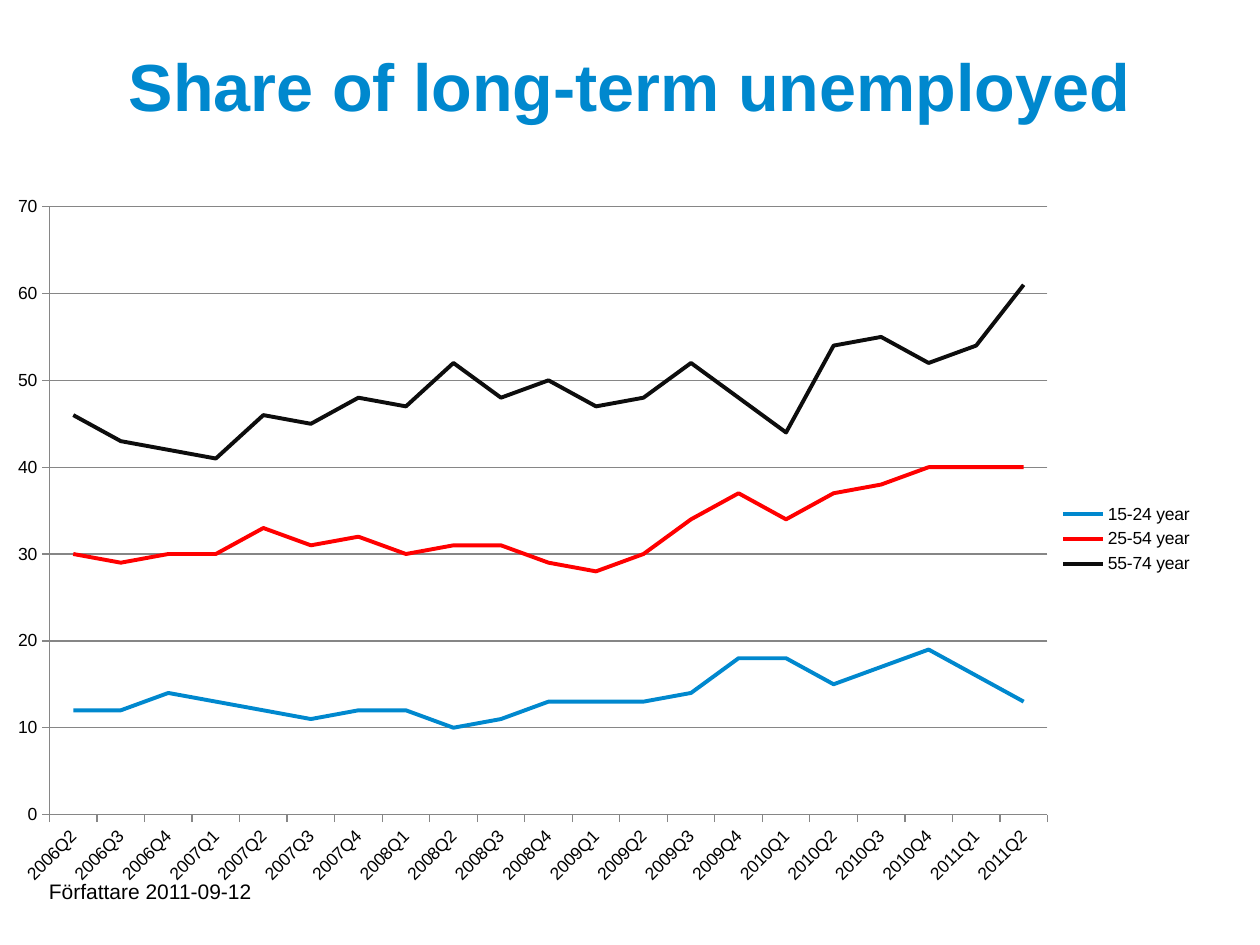
from dataclasses import dataclass

from lxml import etree
from pptx import Presentation, util as u
from pptx.chart.data import CategoryChartData
from pptx.dml.color import RGBColor
from pptx.enum import chart as ch, text

Pt = u.Pt


@dataclass(frozen=True)
class Theme:
    """Colours, font and type sizes of the slide."""
    font: str = "Arial"
    blue: str = "0088CE"
    red: str = "FF0000"
    ink: str = "0D0D0D"
    black: str = "000000"
    grid: str = "868686"
    title: float = 38
    footer: float = 12
    label: float = 10
    line: float = 2.25
    rule: float = 0.75


T = Theme()
QUARTERS = [f"{n // 4}Q{n % 4 + 1}" for n in range(2006 * 4 + 1, 2011 * 4 + 2)]
SHARES = [
    ("15-24 year", T.blue, [12, 12, 14, 13, 12, 11, 12, 12, 10, 11, 13,
                            13, 13, 14, 18, 18, 15, 17, 19, 16, 13]),
    ("25-54 year", T.red, [30, 29, 30, 30, 33, 31, 32, 30, 31, 31, 29,
                           28, 30, 34, 37, 34, 37, 38, 40, 40, 40]),
    ("55-74 year", T.ink, [46, 43, 42, 41, 46, 45, 48, 47, 52, 48, 50,
                           47, 48, 52, 48, 44, 54, 55, 52, 54, 61]),
]


def set_font(font, size, color, bold=False):
    """Apply the theme font with a size, colour and weight."""
    font.name, font.size, font.bold = T.font, Pt(size), bold
    font.color.rgb = RGBColor.from_string(color)


def set_line(line, color, width):
    """Colour a line and set its width."""
    line.color.rgb = RGBColor.from_string(color)
    line.width = Pt(width)


def add_text(s, box, words, size, color, bold=False, align=text.PP_ALIGN.LEFT):
    """Add a one-line text box, centred vertically in its box."""
    tf = s.shapes.add_textbox(*map(Pt, box)).text_frame
    tf.word_wrap = True
    tf.vertical_anchor = text.MSO_ANCHOR.MIDDLE
    tf.margin_left = tf.margin_right = Pt(28)
    p = tf.paragraphs[0]
    p.alignment = align
    r = p.add_run()
    r.text = words
    set_font(r.font, size, color, bold)


def set_plot_layout(chart, x, y, w, h):
    """Fix the inner plot area as fractions of the chart."""
    area = chart.plots[0]._element.getparent()
    ns = area.nsmap["c"]
    for old in area.findall(f"{{{ns}}}layout"):
        area.remove(old)
    layout = etree.Element(f"{{{ns}}}layout")
    manual = etree.SubElement(layout, f"{{{ns}}}manualLayout")
    for tag, val in (("layoutTarget", "inner"), ("xMode", "edge"),
                     ("yMode", "edge"), ("x", x), ("y", y), ("w", w), ("h", h)):
        etree.SubElement(manual, f"{{{ns}}}{tag}", val=str(val))
    area.insert(0, layout)


def add_share_chart(s, box):
    """Draw the quarterly shares as a line chart with a legend."""
    data = CategoryChartData(number_format="0")
    data.categories = QUARTERS
    for name, _, vals in SHARES:
        data.add_series(name, vals)
    chart = s.shapes.add_chart(ch.XL_CHART_TYPE.LINE, *map(Pt, box), data).chart
    set_font(chart.font, T.label, T.black)
    chart.has_title = False
    chart.has_legend = True
    chart.legend.position = ch.XL_LEGEND_POSITION.RIGHT
    chart.legend.include_in_layout = False
    set_plot_layout(chart, 0.05, 0.03, 0.82, 0.86)
    plot = chart.plots[0]
    plot.vary_by_categories = False
    for ser, (_, color, _) in zip(plot.series, SHARES):
        ser.smooth = False
        ser.marker.style = ch.XL_MARKER_STYLE.NONE
        set_line(ser.format.line, color, T.line)
    for axis in (chart.category_axis, chart.value_axis):
        axis.major_tick_mark = ch.XL_TICK_MARK.OUTSIDE
        axis.minor_tick_mark = ch.XL_TICK_MARK.NONE
        set_font(axis.tick_labels.font, T.label, T.black)
        set_line(axis.format.line, T.grid, T.rule)
    body = chart.category_axis.tick_labels.font._element.getparent().getparent().getparent()
    body.bodyPr.set("rot", "-2700000")
    body.bodyPr.set("vert", "horz")
    val = chart.value_axis
    val.minimum_scale, val.maximum_scale, val.major_unit = 0, 70, 10
    val.has_major_gridlines = True
    set_line(val.major_gridlines.format.line, T.grid, T.rule)


def main():
    """Build and save the slide."""
    prs = Presentation()
    prs.slide_width, prs.slide_height = Pt(720), Pt(540)
    s = prs.slides.add_slide(prs.slide_layouts[6])
    add_text(s, (0, 20, 720, 57), "Share of long-term unemployed", T.title,
             T.blue, bold=True, align=text.PP_ALIGN.CENTER)
    add_text(s, (0, 490, 360, 38), "Författare 2011-09-12", T.footer, T.black)
    add_share_chart(s, (-6.5, 106, 695.5, 404))
    prs.save("out.pptx")


if __name__ == "__main__":
    main()
